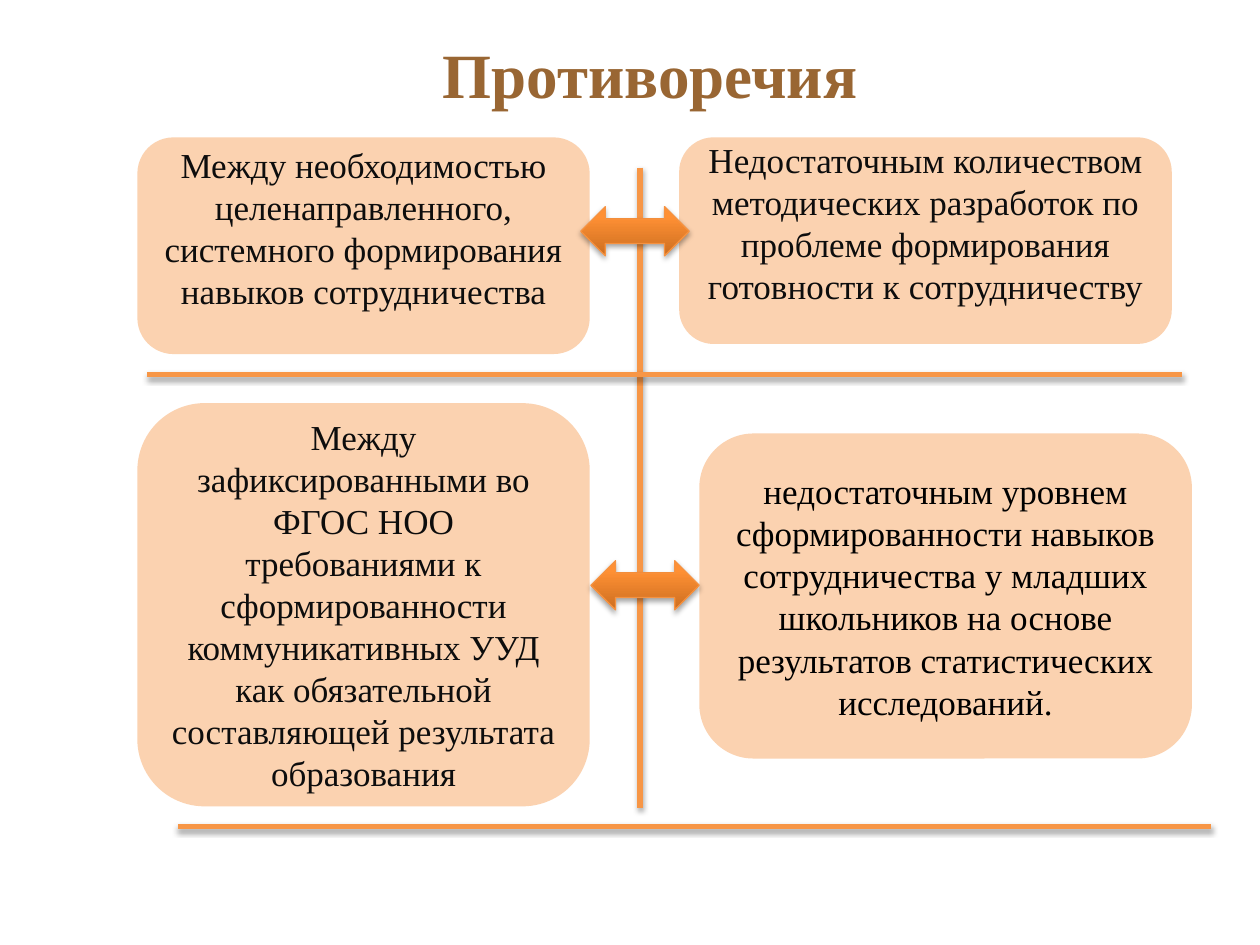
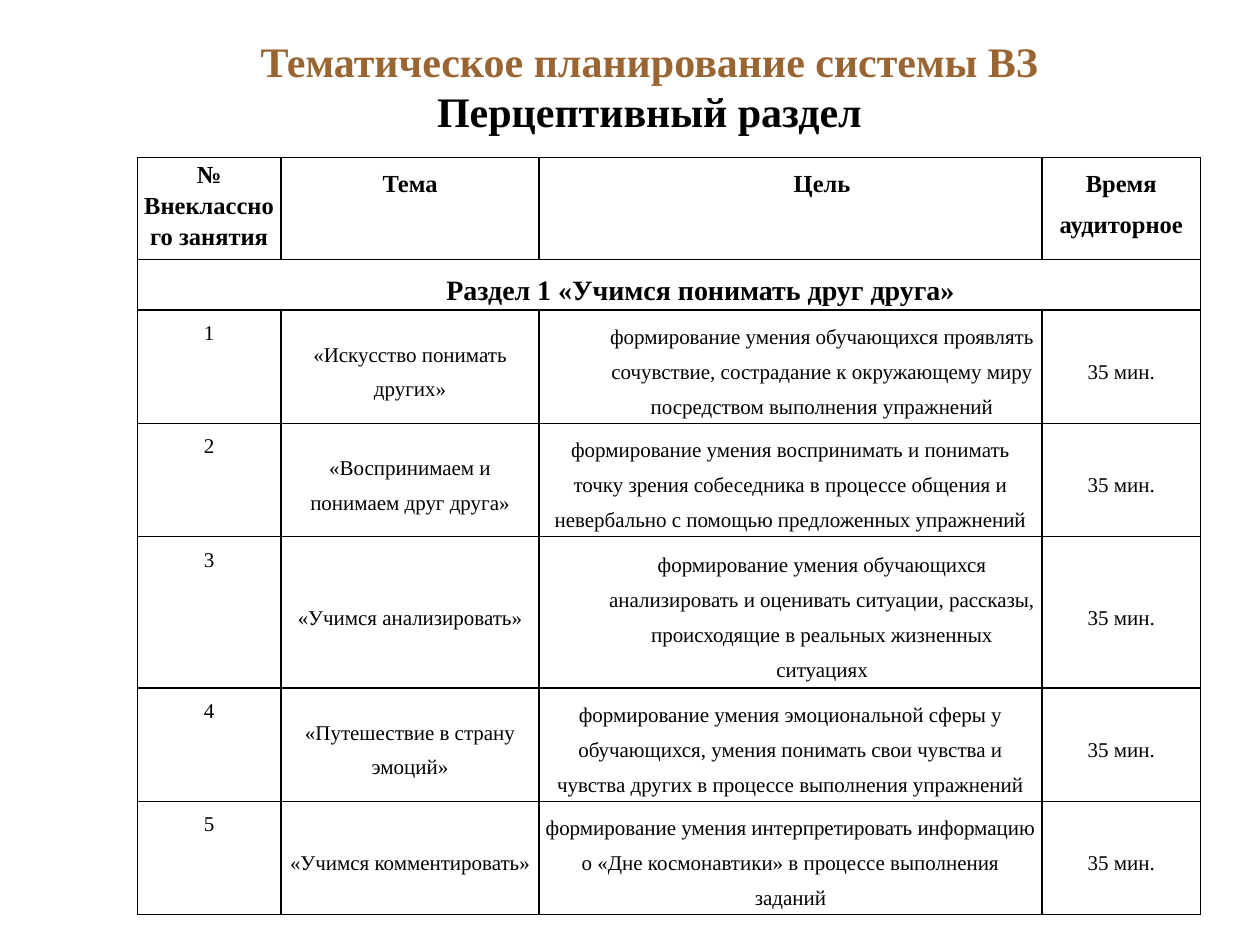
from lxml import etree
from pptx import Presentation
from pptx.dml.color import RGBColor
from pptx.enum.shapes import MSO_CONNECTOR, MSO_SHAPE
from pptx.enum.text import MSO_ANCHOR, MSO_AUTO_SIZE, PP_ALIGN
from pptx.oxml import parse_xml
from pptx.oxml.ns import nsdecls, qn
from pptx.util import Inches, Pt

STRAIGHT = MSO_CONNECTOR.STRAIGHT
ROUNDED, ARROW = MSO_SHAPE.ROUNDED_RECTANGLE, MSO_SHAPE.LEFT_RIGHT_ARROW
TOP, MIDDLE = MSO_ANCHOR.TOP, MSO_ANCHOR.MIDDLE
CENTER, NO_FIT = PP_ALIGN.CENTER, MSO_AUTO_SIZE.NONE
FONT = "Times New Roman"
TITLE_ONLY = 5
COLORS = {
    "title": "996633", "black": "000000", "soft_black": "0D0D0D", "box": "FAC090",
    "line": "F79646", "arrow_edge": "F69240", "arrow_dark": "CC6E20",
    "arrow_light": "FF9034",
}

# Slide 1: boxes as (left, top, width, height, text colour, bottom inset, text)
CONTRADICTIONS_TITLE = [("Противоречия", "title")]
BOXES = [
    (1.09, 1.09, 3.59, 1.72, "soft_black", 0.34,
     "Между необходимостью целенаправленного, системного формирования "
     "навыков сотрудничества"),
    (5.39, 1.09, 3.91, 1.64, "soft_black", 0.34,
     "Недостаточным количеством методических разработок по проблеме "
     "формирования готовности к сотрудничеству"),
    (1.09, 3.2, 3.59, 3.2, "soft_black", 0.05,
     "Между зафиксированными во ФГОС НОО требованиями к сформированности "
     "коммуникативных УУД как обязательной составляющей результата образования"),
    (5.55, 3.44, 3.91, 2.58, "black", 0.05,
     "недостаточным уровнем сформированности навыков сотрудничества у младших "
     "школьников на основе результатов статистических исследований."),
]
DIVIDERS = [(5.08, 1.33, 5.08, 6.41), (9.38, 2.97, 1.17, 2.97), (9.61, 6.56, 1.41, 6.56)]
ARROW_POSITIONS = [(4.61, 1.64), (4.69, 4.45)]
ARROW_SIZE = (0.86, 0.39)

# Slide 2: lessons as (topic, goal, left indent of the goal)
PLAN_TITLE = [("Тематическое планирование системы ВЗ", "title"),
              ("Перцептивный раздел", "black")]
HEADINGS = ["№ Внеклассного занятия", "Тема", "Цель", "Время аудиторное"]
SECTION = "Раздел 1 «Учимся понимать друг друга»"
DURATION = "35 мин."
INDENT = 0.5
LESSONS = [
    ("«Искусство понимать других»",
     "формирование умения обучающихся проявлять сочувствие, сострадание к "
     "окружающему миру посредством выполнения упражнений", INDENT),
    ("«Воспринимаем и понимаем друг друга»",
     "формирование умения воспринимать и понимать точку зрения собеседника в "
     "процессе общения и невербально с помощью предложенных упражнений", 0),
    ("«Учимся анализировать»",
     "формирование умения обучающихся анализировать и оценивать ситуации, "
     "рассказы, происходящие в реальных жизненных ситуациях", INDENT),
    ("«Путешествие в страну эмоций»",
     "формирование умения эмоциональной сферы у обучающихся, умения понимать "
     "свои чувства и чувства других в процессе выполнения упражнений", 0),
    ("«Учимся комментировать»",
     "формирование умения интерпретировать информацию о «Дне космонавтики» в "
     "процессе выполнения заданий", 0),
]
TABLE_LEFT, TABLE_TOP = 1.09, 1.25
COLUMN_WIDTHS = [1.14, 2.05, 3.99, 1.26]
ROW_HEIGHTS = [0.81, 0.4, 0.9, 0.9, 1.2, 0.9, 0.9]


def rgb(name):
    return RGBColor.from_string(COLORS[name])


def inches(*lengths):
    return [Inches(length) for length in lengths]


def set_format(target, **values):
    for name, value in values.items():
        setattr(target, name, value)


def write(paragraph, text, size, color="black", bold=False):
    paragraph.alignment = CENTER
    run = paragraph.add_run()
    run.text = text
    set_format(run.font, name=FONT, size=Pt(size), bold=bold)
    run.font.color.rgb = rgb(color)


def add_shadow(shape):
    """Soft shadow falling straight down."""
    properties = shape._element.spPr
    for effects in properties.findall(qn("a:effectLst")):
        properties.remove(effects)
    properties.append(parse_xml(
        f'<a:effectLst {nsdecls("a")}><a:outerShdw blurRad="{Pt(3.1)}" dist="{Pt(1.8)}" '
        'dir="5400000" rotWithShape="0"><a:srgbClr val="000000"><a:alpha val="35000"/>'
        '</a:srgbClr></a:outerShdw></a:effectLst>'))


def add_titled_slide(presentation, lines, place, size):
    slide = presentation.slides.add_slide(presentation.slide_layouts[TITLE_ONLY])
    title = slide.shapes.title
    title.left, title.top, title.width, title.height = inches(*place)
    frame = title.text_frame
    set_format(frame, auto_size=NO_FIT, vertical_anchor=TOP, word_wrap=True)
    for number, (text, color) in enumerate(lines):
        paragraph = frame.add_paragraph() if number else frame.paragraphs[0]
        write(paragraph, text, size, color, bold=True)
    return slide


def add_divider(slide, ends):
    divider = slide.shapes.add_connector(STRAIGHT, *inches(*ends))
    divider.line.color.rgb = rgb("line")
    divider.line.width = Pt(3)
    add_shadow(divider)


def add_box(slide, place, color, bottom_inset, text):
    box = slide.shapes.add_shape(ROUNDED, *inches(*place))
    box.shadow.inherit = False
    box.fill.solid()
    box.fill.fore_color.rgb = rgb("box")
    fill_color = box._element.spPr.find(qn("a:solidFill"))[0]
    etree.SubElement(fill_color, qn("a:alpha")).set("val", "71000")
    box.line.fill.background()
    frame = box.text_frame
    set_format(frame, word_wrap=True, vertical_anchor=MIDDLE,
               margin_bottom=Inches(bottom_inset))
    write(frame.paragraphs[0], text, 20, color)


def add_arrow(slide, position):
    arrow = slide.shapes.add_shape(ARROW, *inches(*position, *ARROW_SIZE))
    arrow.fill.gradient()
    arrow.fill.gradient_angle = 90
    stops = zip(arrow.fill.gradient_stops, [("arrow_dark", 0), ("arrow_light", 0.8)])
    for stop, (color, position_share) in stops:
        stop.color.rgb = rgb(color)
        stop.position = position_share
    arrow.line.color.rgb = rgb("arrow_edge")
    arrow.line.width = Pt(0.75)
    add_shadow(arrow)


def format_cell(cell):
    set_format(cell, margin_left=Inches(0.04), margin_right=Inches(0.04),
               margin_top=0, margin_bottom=0)
    properties = cell._tc.get_or_add_tcPr()
    for side in "LRTB":
        properties.append(parse_xml(
            f'<a:ln{side} {nsdecls("a")} w="{Pt(1)}"><a:solidFill>'
            f'<a:srgbClr val="{COLORS["black"]}"/></a:solidFill></a:ln{side}>'))
    cell.fill.background()


def fill_cell(cell, text, size, bold=False, indent=0, spacing=1.5, anchor=TOP):
    cell.vertical_anchor = anchor
    paragraph = cell.text_frame.paragraphs[0]
    write(paragraph, text, size, bold=bold)
    paragraph.line_spacing = spacing
    if indent:
        paragraph._p.get_or_add_pPr().set("marL", str(Inches(indent)))


def build_contradictions(presentation):
    slide = add_titled_slide(presentation, CONTRADICTIONS_TITLE, (2.66, 0.23, 5, 0.71), 36)
    for ends in DIVIDERS:
        add_divider(slide, ends)
    for *place, color, bottom_inset, text in BOXES:
        add_box(slide, place, color, bottom_inset, text)
    for position in ARROW_POSITIONS:
        add_arrow(slide, position)


def build_plan(presentation):
    slide = add_titled_slide(presentation, PLAN_TITLE, (0.78, 0.23, 8.75, 1.0), 24)
    table = slide.shapes.add_table(
        len(ROW_HEIGHTS), len(COLUMN_WIDTHS),
        *inches(TABLE_LEFT, TABLE_TOP, sum(COLUMN_WIDTHS), sum(ROW_HEIGHTS))).table
    set_format(table, first_row=False, horz_banding=False)
    for column, width in zip(table.columns, COLUMN_WIDTHS):
        column.width = Inches(width)
    for row, height in zip(table.rows, ROW_HEIGHTS):
        row.height = Inches(height)
    for cell in table.iter_cells():
        format_cell(cell)

    # Heading row and the section row across all columns
    for column, heading in enumerate(HEADINGS):
        fill_cell(table.cell(0, column), heading, 14, bold=True,
                  indent=INDENT if heading == "Цель" else 0,
                  spacing=1.5 if column else 1.15)
    section = table.cell(1, 0)
    section.merge(table.cell(1, len(HEADINGS) - 1))
    fill_cell(section, SECTION, 16, bold=True, indent=INDENT)

    # One row per lesson
    for number, (topic, goal, indent) in enumerate(LESSONS, 1):
        cells = table.rows[number + 1].cells
        fill_cell(cells[0], str(number), 12)
        fill_cell(cells[1], topic, 12, anchor=MIDDLE)
        fill_cell(cells[2], goal, 12, indent=indent, anchor=MIDDLE)
        fill_cell(cells[3], DURATION, 12, anchor=MIDDLE)


def main():
    presentation = Presentation()
    presentation.slide_width, presentation.slide_height = inches(10, 7.5)
    build_contradictions(presentation)
    build_plan(presentation)
    presentation.save("out.pptx")


if __name__ == "__main__":
    main()
